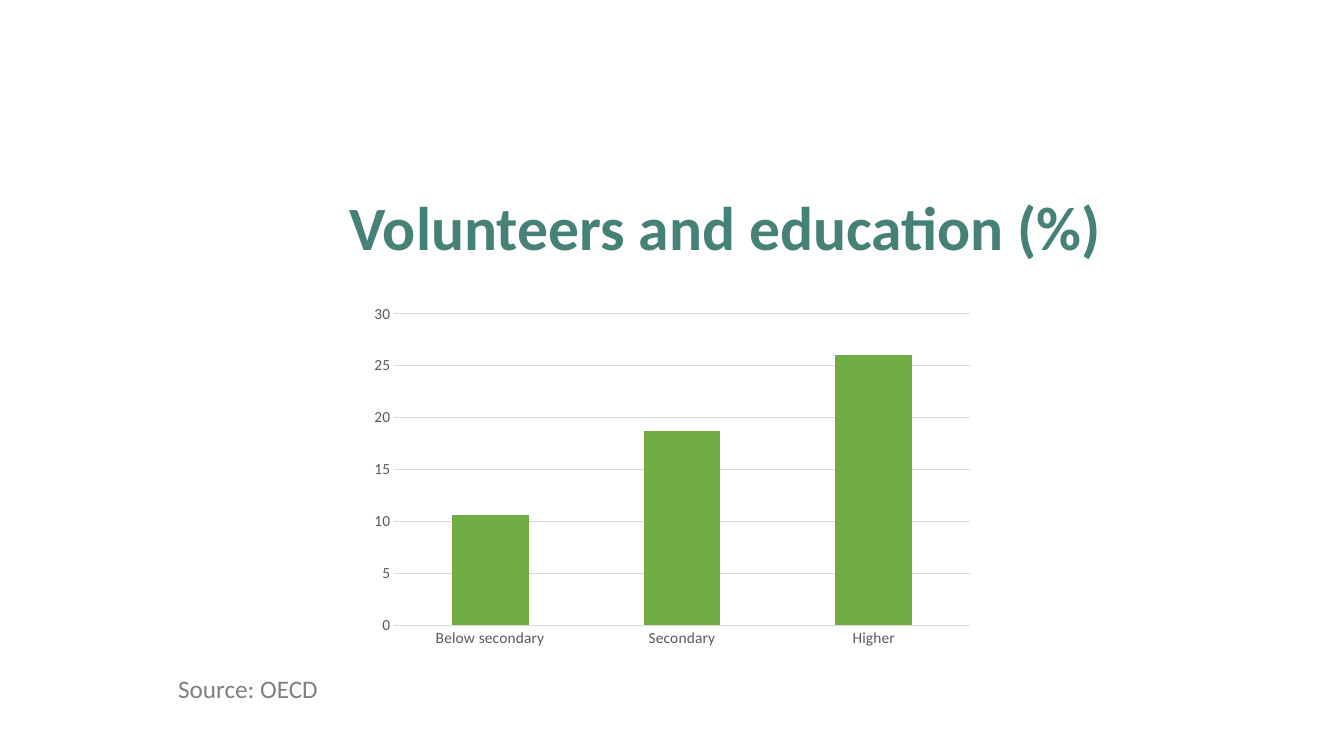
"""Build a slide with a column chart of volunteers by level of education."""
from pptx import Presentation
from pptx.chart.data import CategoryChartData
from pptx.dml.color import RGBColor
from pptx.enum.chart import XL_CHART_TYPE, XL_TICK_MARK
from pptx.enum.text import MSO_ANCHOR, PP_ALIGN
from pptx.util import Inches, Pt

STACKED = XL_CHART_TYPE.COLUMN_STACKED
NO_TICK = XL_TICK_MARK.NONE
TOP, BOTTOM = MSO_ANCHOR.TOP, MSO_ANCHOR.BOTTOM
LEFT, CENTER = PP_ALIGN.LEFT, PP_ALIGN.CENTER

SLIDE_WIDTH, SLIDE_HEIGHT = 13.33, 7.5
FONT = "Calibri"
COLOURS = {
    "heading": "468177",
    "source": "808080",
    "axis_text": "595959",
    "rule": "D9D9D9",
    "bar": "70AD47",
}
VOLUNTEERS = {"Below secondary": 10.6, "Secondary": 18.7, "Higher": 26}


def colour(name):
    """Return the named colour of the palette."""
    return RGBColor.from_string(COLOURS[name])


def area(left, top, width, height):
    """Turn percentages of the slide's size into a position and size."""
    return (
        Inches(SLIDE_WIDTH * left / 100),
        Inches(SLIDE_HEIGHT * top / 100),
        Inches(SLIDE_WIDTH * width / 100),
        Inches(SLIDE_HEIGHT * height / 100),
    )


def style_font(font, size, colour_name, bold=False):
    """Give a font its face, size, colour and weight."""
    font.name = FONT
    font.size = Pt(size)
    font.bold = bold
    font.color.rgb = colour(colour_name)


def style_rule(line):
    """Draw a thin grey chart line."""
    line.color.rgb = colour("rule")
    line.width = Pt(0.75)


def fill_placeholder(holder, text, place, anchor, align, size, colour_name, bold=False):
    """Move a placeholder and give it one formatted paragraph."""
    holder.left, holder.top, holder.width, holder.height = place
    frame = holder.text_frame
    frame.text = text
    frame.word_wrap = True
    frame.vertical_anchor = anchor
    paragraph = frame.paragraphs[0]
    paragraph.alignment = align
    paragraph.line_spacing = 0.9
    paragraph.space_before = Pt(0)
    style_font(paragraph.runs[0].font, size, colour_name, bold)


def style_axis(axis):
    """Remove an axis's tick marks and format its labels."""
    axis.major_tick_mark = axis.minor_tick_mark = NO_TICK
    style_font(axis.tick_labels.font, 11, "axis_text")


def add_volunteer_chart(slide, place):
    """Add the column chart of volunteer shares."""
    shares = CategoryChartData(number_format="General")
    shares.categories = list(VOLUNTEERS)
    shares.add_series("Series 1", list(VOLUNTEERS.values()))
    chart = slide.shapes.add_chart(STACKED, *place, shares).chart
    chart.has_title = chart.has_legend = False
    style_font(chart.font, 11, "axis_text")

    education, percent = chart.category_axis, chart.value_axis
    style_axis(education)
    style_axis(percent)
    education.has_major_gridlines = False
    style_rule(education.format.line)
    percent.minimum_scale, percent.maximum_scale, percent.major_unit = 0, 30, 5
    percent.tick_labels.number_format = "0"
    percent.tick_labels.number_format_is_linked = False
    percent.has_major_gridlines = True
    style_rule(percent.major_gridlines.format.line)
    percent.format.line.fill.background()

    columns = chart.plots[0]
    columns.vary_by_categories = False
    columns.gap_width, columns.overlap = 150, 100
    bars = columns.series[0].format.fill
    bars.solid()
    bars.fore_color.rgb = colour("bar")


def main():
    """Build and save the presentation."""
    deck = Presentation()
    deck.slide_width, deck.slide_height = Inches(SLIDE_WIDTH), Inches(SLIDE_HEIGHT)
    slide = deck.slides.add_slide(deck.slide_layouts[0])
    fill_placeholder(
        slide.shapes.title, "Volunteers and education (%)",
        area(16.5, 19.6, 75, 16), BOTTOM, CENTER, 44, "heading", bold=True,
    )
    fill_placeholder(
        slide.placeholders[1], "Source: OECD",
        area(12.5, 88.9, 75, 6), TOP, LEFT, 18, "source",
    )
    add_volunteer_chart(slide, area(26.93, 39.33, 46.14, 47.33))
    deck.save("out.pptx")


if __name__ == "__main__":
    main()
